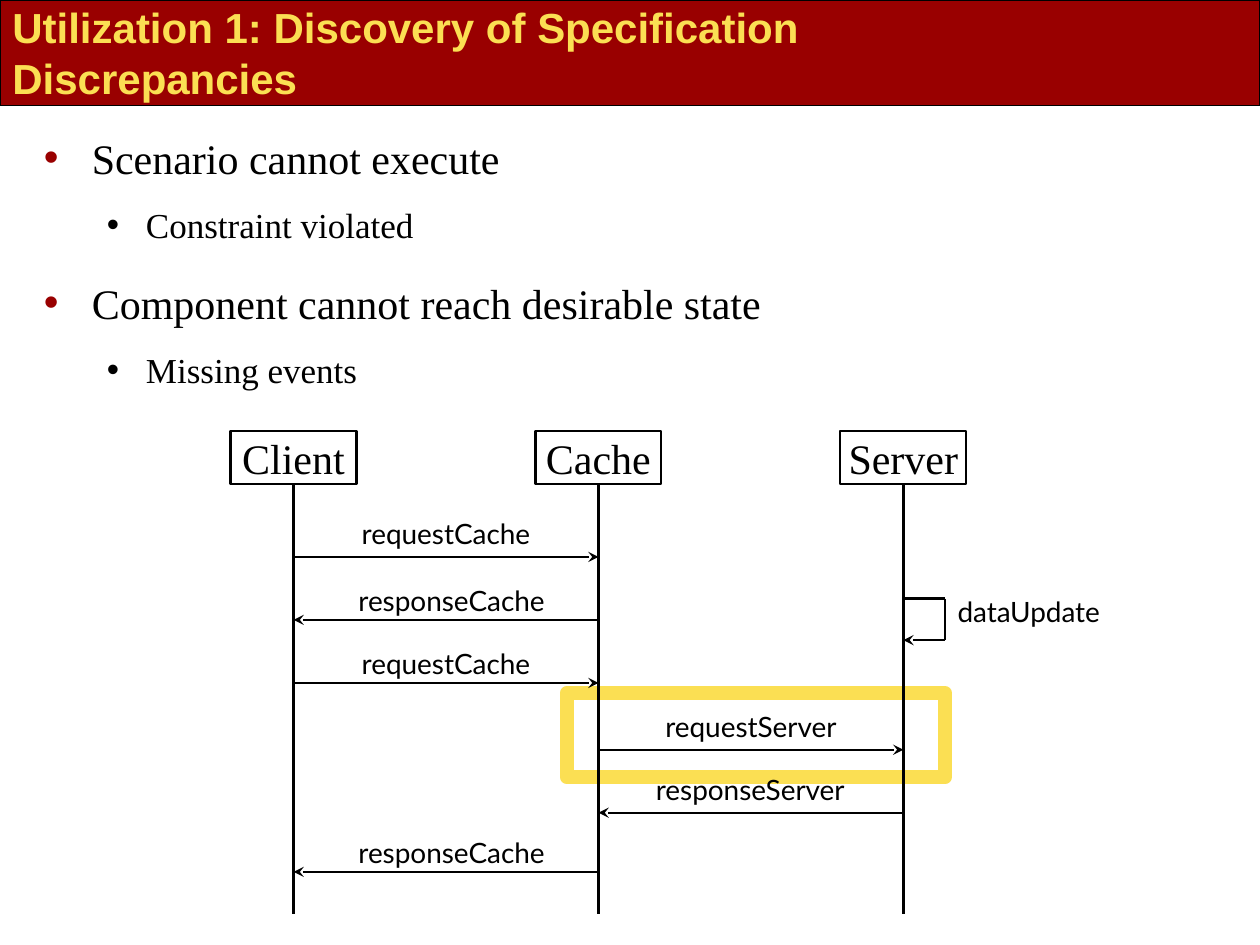
from dataclasses import dataclass

from lxml.etree import SubElement
from pptx import Presentation
from pptx.dml.color import RGBColor
from pptx.enum.shapes import MSO_CONNECTOR as Connector, MSO_SHAPE as Shape
from pptx.enum.text import MSO_ANCHOR as Anchor, PP_ALIGN as Align
from pptx.oxml.ns import qn
from pptx.slide import Slide
from pptx.util import Inches, Pt

RED = RGBColor(0x99, 0x00, 0x00)
YELLOW = RGBColor(0xFB, 0xDF, 0x53)
BLACK = RGBColor(0x00, 0x00, 0x00)
WHITE = RGBColor(0xFF, 0xFF, 0xFF)

BOX_WIDTH, BOX_HEIGHT, BOX_TOP = 1, 0.42, 3.42
LIFELINE_END = 7.25
LABEL_HEIGHT = 0.37
LOOP_X, LOOP_TOP, LOOP_BOTTOM = 7.5, 4.75, 5.08

LANES = {name: 2.33 + 2.42 * i for i, name in enumerate(["Client", "Cache", "Server"])}

BULLETS = [
    ("Scenario cannot execute", 0),
    ("Constraint violated", 1),
    ("Component cannot reach desirable state", 0),
    ("Missing events", 1),
]

MESSAGES = [
    ("requestCache", "Client", "Cache", 4.42, 2.75, 4.05, 1.58),
    ("responseCache", "Cache", "Client", 4.92, 2.67, 4.58, 1.83),
    ("requestCache", "Client", "Cache", 5.42, 2.75, 5.08, 1.58),
    ("requestServer", "Cache", "Server", 5.95, 5.17, 5.58, 1.58),
    ("responseServer", "Server", "Cache", 6.45, 5.08, 6.08, 1.75),
    ("responseCache", "Cache", "Client", 6.92, 2.67, 6.58, 1.83),
]


@dataclass
class SlideBuilder:
    slide: Slide
    heading_font: str = "Arial"
    body_font: str = "Times New Roman"
    label_font: str = "Lato"

    def style(self, paragraph, name, size, color=BLACK, bold=False):
        font = paragraph.font
        font.name, font.size, font.bold = name, Pt(size), bold
        font.color.rgb = color

    def rectangle(self, left, top, width, height, fill, line, weight):
        shape = self.slide.shapes.add_shape(
            Shape.RECTANGLE, Inches(left), Inches(top), Inches(width), Inches(height))
        shape.shadow.inherit = False
        shape.fill.solid()
        shape.fill.fore_color.rgb = fill
        shape.line.color.rgb = line
        shape.line.width = Pt(weight)
        return shape

    def text_frame(self, left, top, width, height):
        box = self.slide.shapes.add_textbox(
            Inches(left), Inches(top), Inches(width), Inches(height))
        box.text_frame.word_wrap = True
        return box.text_frame

    def title(self, text):
        frame = self.text_frame(0, 0, 7.83, 0.83)
        frame.vertical_anchor = Anchor.MIDDLE
        paragraph = frame.paragraphs[0]
        paragraph.text = text
        self.style(paragraph, self.heading_font, 24, YELLOW, True)

    def bullet(self, paragraph, indent, hanging, color):
        properties = paragraph._p.get_or_add_pPr()
        properties.set("marL", str(Inches(indent)))
        properties.set("indent", str(-Inches(hanging)))
        bullet_color = SubElement(properties, qn("a:buClr"))
        SubElement(bullet_color, qn("a:srgbClr"), val=str(color))
        SubElement(properties, qn("a:buFont"), typeface="Arial")
        SubElement(properties, qn("a:buChar"), char="•")

    def bullets(self, items):
        frame = self.text_frame(0.25, 1, 9.25, 2.3)
        levels = [(0.38, 0.38, RED, 24, 12), (0.81, 0.31, BLACK, 20, 6)]
        for i, (text, level) in enumerate(items):
            paragraph = frame.add_paragraph() if i else frame.paragraphs[0]
            indent, hanging, color, size, space = levels[level]
            paragraph.text = text
            paragraph.level = level
            if i:
                paragraph.space_before = Pt(space)
            paragraph.space_after = Pt(6)
            self.bullet(paragraph, indent, hanging, color)
            self.style(paragraph, self.body_font, size)

    def participant(self, name, x):
        shape = self.rectangle(
            x - BOX_WIDTH / 2, BOX_TOP, BOX_WIDTH, BOX_HEIGHT, WHITE, BLACK, 1.25)
        frame = shape.text_frame
        frame.word_wrap = False
        frame.vertical_anchor = Anchor.MIDDLE
        paragraph = frame.paragraphs[0]
        paragraph.text = name
        paragraph.alignment = Align.CENTER
        self.style(paragraph, self.body_font, 24)
        lifeline = self.line(x, BOX_TOP + BOX_HEIGHT, x, LIFELINE_END)
        lifeline.begin_connect(shape, 2)

    def line(self, x1, y1, x2, y2, weight=1.5):
        connector = self.slide.shapes.add_connector(
            Connector.STRAIGHT, Inches(x1), Inches(y1), Inches(x2), Inches(y2))
        connector.line.color.rgb = BLACK
        connector.line.width = Pt(weight)
        SubElement(connector._element.spPr, qn("a:effectLst"))
        return connector

    def arrow(self, x1, x2, y):
        connector = self.line(x1, y, x2, y, 1.25)
        SubElement(connector.line._get_or_add_ln(), qn("a:tailEnd"), type="stealth")

    def label(self, text, left, top, width):
        paragraph = self.text_frame(left, top, width, LABEL_HEIGHT).paragraphs[0]
        paragraph.text = text
        paragraph.alignment = Align.CENTER
        self.style(paragraph, self.label_font, 16)


def main():
    presentation = Presentation()
    presentation.slide_width, presentation.slide_height = Inches(10), Inches(7.5)
    builder = SlideBuilder(presentation.slides.add_slide(presentation.slide_layouts[6]))

    builder.rectangle(0, 0, 10, 0.84, RED, BLACK, 0.75)
    builder.bullets(BULLETS)
    builder.rectangle(4.5, 5.5, 3, 0.67, WHITE, YELLOW, 8)
    builder.title("Utilization 1: Discovery of Specification Discrepancies")

    for name, x in LANES.items():
        builder.participant(name, x)
    for text, sender, receiver, y, left, top, width in MESSAGES:
        builder.arrow(LANES[sender], LANES[receiver], y)
        builder.label(text, left, top, width)

    server = LANES["Server"]
    builder.line(server, LOOP_TOP, LOOP_X, LOOP_TOP)
    builder.line(LOOP_X, LOOP_TOP, LOOP_X, LOOP_BOTTOM)
    builder.arrow(LOOP_X, server, LOOP_BOTTOM)
    builder.label("dataUpdate", LOOP_X, 4.67, 1.33)

    presentation.save("out.pptx")


if __name__ == "__main__":
    main()
